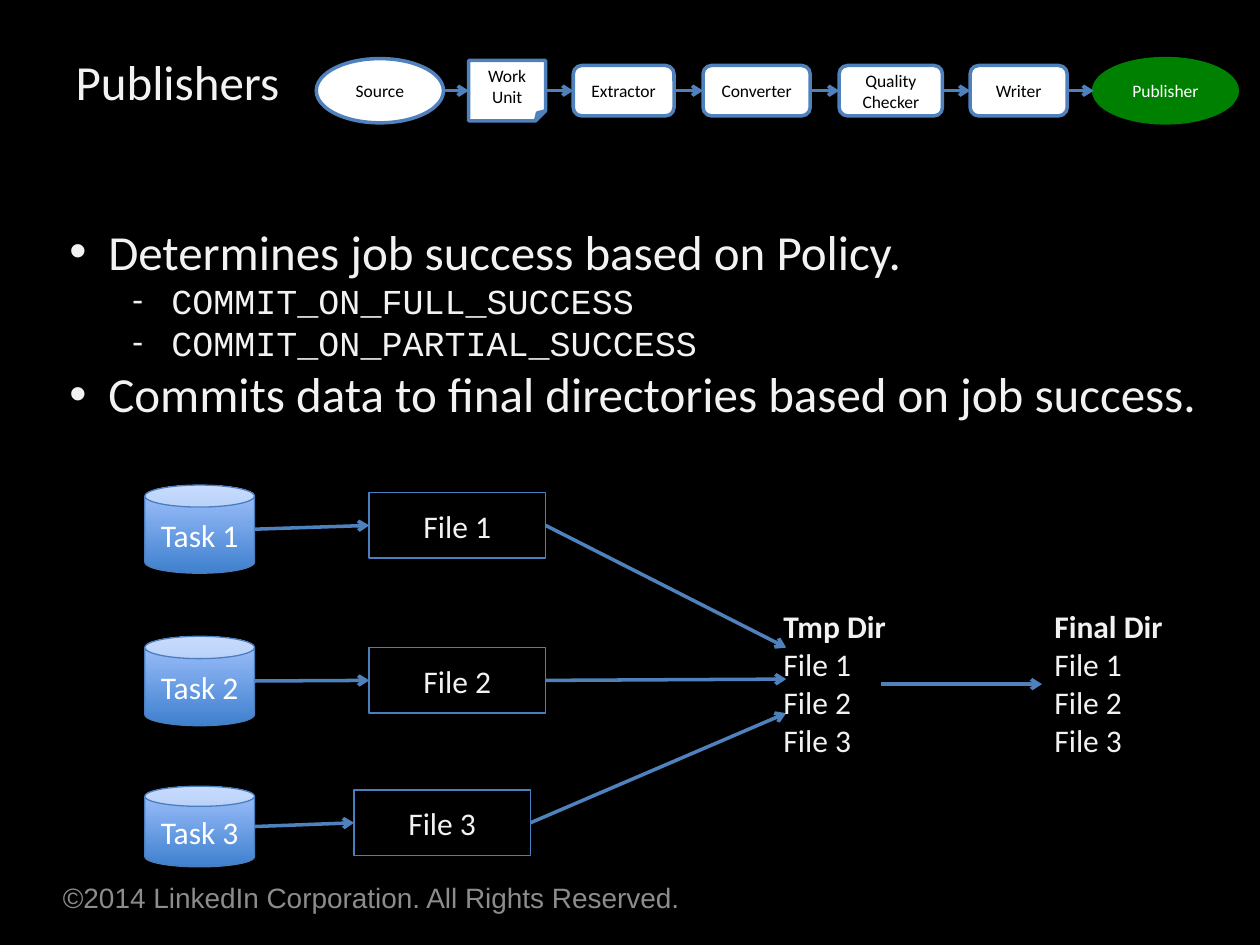
from lxml import etree
from pptx import Presentation
from pptx.dml.color import RGBColor
from pptx.enum.shapes import MSO_CONNECTOR, MSO_SHAPE
from pptx.enum.text import MSO_ANCHOR, MSO_AUTO_SIZE, PP_ALIGN
from pptx.oxml.ns import qn
from pptx.util import Inches, Pt

STRAIGHT = MSO_CONNECTOR.STRAIGHT
CAN, RECTANGLE, ELLIPSE = MSO_SHAPE.CAN, MSO_SHAPE.RECTANGLE, MSO_SHAPE.OVAL
NOTE, ROUNDED = MSO_SHAPE.FOLDED_CORNER, MSO_SHAPE.ROUNDED_RECTANGLE
MIDDLE, NO_FIT = MSO_ANCHOR.MIDDLE, MSO_AUTO_SIZE.NONE
LEFT, CENTER = PP_ALIGN.LEFT, PP_ALIGN.CENTER
BLACK = RGBColor(0x00, 0x00, 0x00)
WHITE = RGBColor(0xFF, 0xFF, 0xFF)
PALE = RGBColor(0xF2, 0xF2, 0xF2)
GRAY = RGBColor(0x8C, 0x8C, 0x8C)
GREEN = RGBColor(0x00, 0x80, 0x00)
BLUE = RGBColor(0x4F, 0x81, 0xBD)
EDGE_BLUE = RGBColor(0x4B, 0x7E, 0xBC)
DEEP_BLUE = RGBColor(0x3F, 0x80, 0xCE)
LIGHT_BLUE = RGBColor(0xA4, 0xC4, 0xFF)

deck = Presentation()
deck.slide_width, deck.slide_height = Inches(10), Inches(7.5)
COLUMN, ROW = deck.slide_width // 100, deck.slide_height // 75
page = deck.slides.add_slide(deck.slide_layouts[1])
page.background.fill.solid()
page.background.fill.fore_color.rgb = BLACK


def write(box, text, size, color, align=LEFT, font="Calibri"):
    frame = box.text_frame
    frame.text = text
    frame.word_wrap = True
    for para in frame.paragraphs:
        para.alignment = align
        for span in para.runs:
            span.font.size, span.font.name = Pt(size), font
            span.font.color.rgb = color
    return frame


def draw_arrow(x1, y1, x2, y2):
    arrow = page.shapes.add_connector(
        STRAIGHT, int(x1 * COLUMN), int(y1 * ROW), int(x2 * COLUMN), int(y2 * ROW))
    arrow.line.color.rgb, arrow.line.width = BLUE, Pt(2)
    etree.SubElement(arrow.line._get_or_add_ln(), qn("a:tailEnd"), type="arrow")
    etree.SubElement(arrow._element.spPr, qn("a:effectLst"))
    return arrow


footer = page.shapes.add_textbox(5 * COLUMN, int(70.3 * ROW), int(58.7 * COLUMN), int(1.8 * ROW))
frame = write(footer, "©2014 LinkedIn Corporation. All Rights Reserved.", 16, GRAY, font="Arial")
frame.margin_left = frame.margin_right = frame.margin_top = frame.margin_bottom = 0
frame.vertical_anchor = MIDDLE

title, body = page.placeholders
title.left, title.top = 5 * COLUMN, int(0.2 * ROW)
title.width, title.height = int(21.8 * COLUMN), int(12.5 * ROW)
write(title, "Publishers", 28, PALE).vertical_anchor = MIDDLE
title.text_frame.auto_size = NO_FIT

points = [
    (0, "Determines job success based on Policy."),
    (1, "COMMIT_ON_FULL_SUCCESS"),
    (1, "COMMIT_ON_PARTIAL_SUCCESS"),
    (0, "Commits data to final directories based on job success."),
]
levels = [(8.1, "•", "Arial", 28, "Calibri"), (13.1, "-", "Calibri", 20, "Courier New")]
body.left, body.top = int(-0.5 * COLUMN), int(12.7 * ROW)
body.width, body.height = int(99.7 * COLUMN), int(25.7 * ROW)
frame = write(body, "\n".join(text for level, text in points), 28, PALE)
frame.vertical_anchor, frame.auto_size = MIDDLE, NO_FIT
for para, (level, text) in zip(frame.paragraphs, points):
    indent, bullet, bullet_font, size, font = levels[level]
    para.level, para.space_before = level, Pt(0)
    properties = para._p.get_or_add_pPr()
    properties.set("marL", str(int(indent * COLUMN)))
    properties.set("indent", str(int(-3.1 * COLUMN)))
    etree.SubElement(properties, qn("a:buFont"), typeface=bullet_font)
    etree.SubElement(properties, qn("a:buChar"), char=bullet)
    para.runs[0].font.size, para.runs[0].font.name = Pt(size), font

tasks = [
    (38.5, 7.0, 29.3, 39.1, 51.4),
    (50.5, 7.1, 29.3, 51.4, 53.9),
    (62.4, 6.4, 28.1, 62.7, 56.6),
]
for number, (task_top, task_height, file_left, file_top, target) in enumerate(tasks, 1):
    task = page.shapes.add_shape(
        CAN, int(11.5 * COLUMN), int(task_top * ROW), int(8.7 * COLUMN), int(task_height * ROW))
    task.fill.gradient()
    task.fill.gradient_angle = 90
    for stop, color in zip(task.fill.gradient_stops, (DEEP_BLUE, LIGHT_BLUE)):
        stop.color.rgb = color
    file = page.shapes.add_shape(
        RECTANGLE, int(file_left * COLUMN), int(file_top * ROW), 14 * COLUMN, int(5.2 * ROW))
    file.fill.background()
    for shape, text, color in ((task, "Task", WHITE), (file, "File", PALE)):
        shape.shadow.inherit = False
        shape.line.color.rgb, shape.line.width = EDGE_BLUE, Pt(0.75)
        write(shape, f"{text} {number}", 18, color, CENTER).vertical_anchor = MIDDLE
    file_middle = file_top + 2.6
    incoming = draw_arrow(20.2, task_top + task_height / 2, file_left, file_middle)
    incoming.end_connect(file, 1)
    outgoing = draw_arrow(file_left + 14, file_middle, 62.4, target)
    outgoing.begin_connect(file, 3)

for heading, left in (("Tmp Dir", 61.2), ("Final Dir", 82.7)):
    listing = page.shapes.add_textbox(
        int(left * COLUMN), int(47.7 * ROW), int(12.3 * COLUMN), int(13.1 * ROW))
    frame = write(listing, f"{heading}\nFile 1\nFile 2\nFile 3", 18, PALE)
    frame.paragraphs[0].runs[0].font.bold = True
draw_arrow(69.9, 54.3, 82.7, 54.3)

stages = [
    (ELLIPSE, "Source", 25.1, 10.1, 5.1),
    (NOTE, "Work\nUnit", 37.2, 6.1, 4.8),
    (ROUNDED, "Extractor", 45.5, 8.0, 4.0),
    (ROUNDED, "Converter", 55.8, 8.5, 4.0),
    (ROUNDED, "Quality Checker", 66.6, 8.2, 4.0),
    (ROUNDED, "Writer", 77.0, 7.7, 4.0),
    (ELLIPSE, "Publisher", 86.8, 11.4, 5.1),
]
stage_middle = 7.2
previous = None
for kind, label, left, width, height in stages:
    final = label == "Publisher"
    stage = page.shapes.add_shape(
        kind, int(left * COLUMN), int((stage_middle - height / 2) * ROW),
        int(width * COLUMN), int(height * ROW))
    stage.shadow.inherit = False
    stage.fill.solid()
    stage.fill.fore_color.rgb = GREEN if final else WHITE
    stage.line.color.rgb, stage.line.width = GREEN if final else BLUE, Pt(2)
    write(stage, label, 10, WHITE if final else BLACK, CENTER).vertical_anchor = MIDDLE
    if previous:
        arrow = draw_arrow(previous_right, stage_middle, left, stage_middle)
        if previous_kind != ELLIPSE:
            arrow.begin_connect(previous, 3)
        if kind != ELLIPSE:
            arrow.end_connect(stage, 1)
    previous, previous_kind, previous_right = stage, kind, left + width

deck.save("out.pptx")
